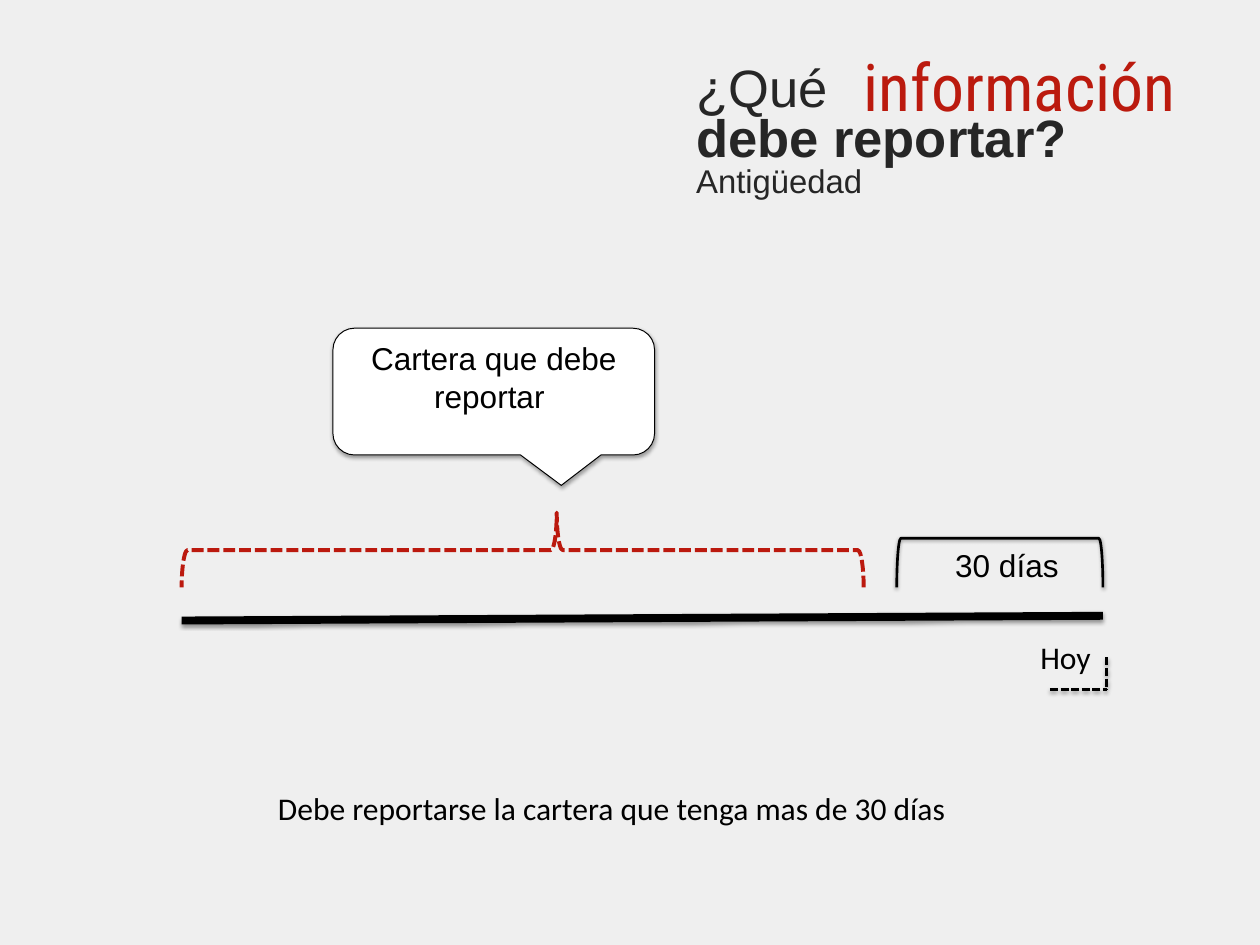
from lxml import etree
from pptx import Presentation
from pptx.dml.color import RGBColor
from pptx.enum.dml import MSO_LINE as Dash
from pptx.enum.shapes import MSO_CONNECTOR as Link, MSO_SHAPE as Shape
from pptx.enum.text import MSO_ANCHOR as Anchor, PP_ALIGN as Align
from pptx.oxml.ns import qn
from pptx.util import Inches, Pt

THEME = {
    "back": "EFEFEF", "ink": "000000", "dark": "262626", "white": "FFFFFF",
    "red": "BB1A0E", "brace": "BB190E",
    "sans": "Arial", "body": "Calibri", "slim": "Roboto Condensed",
    "text": 24, "title": 40, "accent": 50, "sub": 25,
}
SLIDE = (13.32, 9.99)
PAD, WIDE = (0.1, 0.05), (0.13, 0.07)

LINES = [
    ((1.92, 6.56), (11.66, 6.51), 6, None),
    ((11.1, 7.29), (11.7, 7.29), 2, Dash.SQUARE_DOT),
    ((11.7, 6.95), (11.7, 7.29), 2, Dash.SQUARE_DOT),
]
TEXTS = [
    ((10, 5.72, 1.3, 0.5), PAD, True, Align.LEFT, None,
     [("30 días", "sans", "text", "ink", False)]),
    ((10.9, 6.7, 0.96, 0.5), PAD, True, Align.LEFT, None,
     [("Hoy", "body", "text", "ink", False)]),
    ((7.23, 0.64, 5.9, 2.21), WIDE, True, Align.LEFT, 0.8,
     [("¿Qué", "sans", "title", "dark", False),
      ("debe reportar?", "sans", "title", "dark", True),
      ("Antigüedad", "sans", "sub", "dark", False)]),
    ((8.4, 0.41, 4.16, 0.98), WIDE, True, Align.RIGHT, None,
     [("información", "slim", "accent", "red", False)]),
    ((2.84, 8.29, 7.32, 0.5), PAD, False, Align.LEFT, None,
     [("Debe reportarse la cartera que tenga mas de 30 días",
       "body", "text", "ink", False)]),
]
NOTE = [("Cartera que debe reportar ", "sans", "text", "ink", False)]


def color(name):
    """Return a theme colour."""
    return RGBColor.from_string(THEME[name])


def shade(item, alpha=38, dist=1.6):
    """Give an item a soft shadow that falls straight down."""
    props = item._element.spPr
    for old in props.findall(qn("a:effectLst")):
        props.remove(old)
    glow = etree.SubElement(props, qn("a:effectLst"))
    drop = etree.SubElement(glow, qn("a:outerShdw"), blurRad=str(Pt(3.1)),
                            dist=str(Pt(dist)), dir="5400000", rotWithShape="0")
    tint = etree.SubElement(drop, qn("a:srgbClr"), val=THEME["ink"])
    etree.SubElement(tint, qn("a:alpha"), val=str(alpha * 1000))


def write(frame, rows, align, gap=None):
    """Fill a text frame with one paragraph per row."""
    frame.text = "\n".join(row[0] for row in rows)
    for para, (_, face, size, ink, bold) in zip(frame.paragraphs, rows):
        para.alignment = align
        if gap:
            para.line_spacing = gap
        font = para.runs[0].font
        font.name, font.size, font.bold = THEME[face], Pt(THEME[size]), bold
        font.color.rgb = color(ink)


def stroke(item, ink, width, dash=None):
    """Set the line of a shape or connector."""
    item.line.color.rgb = color(ink)
    item.line.width = Pt(width)
    if dash:
        item.line.dash_style = dash


def draw(slide, kind, box, ink, width, dash=None, fill=None, adjust=(), turn=0):
    """Add a preset shape without a shadow."""
    item = slide.shapes.add_shape(kind, *map(Inches, box))
    item.shadow.inherit = False
    item.rotation = turn
    for spot, value in enumerate(adjust):
        item.adjustments[spot] = value
    if fill:
        item.fill.solid()
        item.fill.fore_color.rgb = color(fill)
    else:
        item.fill.background()
    stroke(item, ink, width, dash)
    return item


def main():
    """Build the slide and save it."""
    deck = Presentation()
    deck.slide_width, deck.slide_height = map(Inches, SLIDE)
    slide = deck.slides.add_slide(deck.slide_layouts[6])
    slide.background.fill.solid()
    slide.background.fill.fore_color.rgb = color("back")

    for start, end, width, dash in LINES:
        line = slide.shapes.add_connector(Link.STRAIGHT, *map(Inches, start + end))
        stroke(line, "ink", width, dash)
        shade(line)

    for box, pad, wrap, align, gap, rows in TEXTS:
        frame = slide.shapes.add_textbox(*map(Inches, box)).text_frame
        frame.word_wrap = wrap
        frame.margin_left = frame.margin_right = Inches(pad[0])
        frame.margin_top = frame.margin_bottom = Inches(pad[1])
        write(frame, rows, align, gap)

    brace = draw(slide, Shape.LEFT_BRACE, (5.13, 2.21, 0.79, 7.21), "brace", 3,
                 Dash.SQUARE_DOT, adjust=(0.08, 0.55), turn=270)
    brace._element.spPr.find(qn("a:xfrm")).set("flipH", "1")

    month = draw(slide, Shape.RIGHT_BRACKET, (10.31, 4.86, 0.52, 2.18), "ink", 2,
                 turn=270)
    shade(month)

    note = draw(slide, Shape.ROUNDED_RECTANGULAR_CALLOUT, (3.52, 3.47, 3.4, 1.34),
                "ink", 0.75, fill="white", adjust=(0.21, 0.74, 0.17))
    shade(note, 35, 1.8)
    note.text_frame.word_wrap = True
    note.text_frame.vertical_anchor = Anchor.TOP
    write(note.text_frame, NOTE, Align.CENTER)

    deck.save("out.pptx")


if __name__ == "__main__":
    main()
